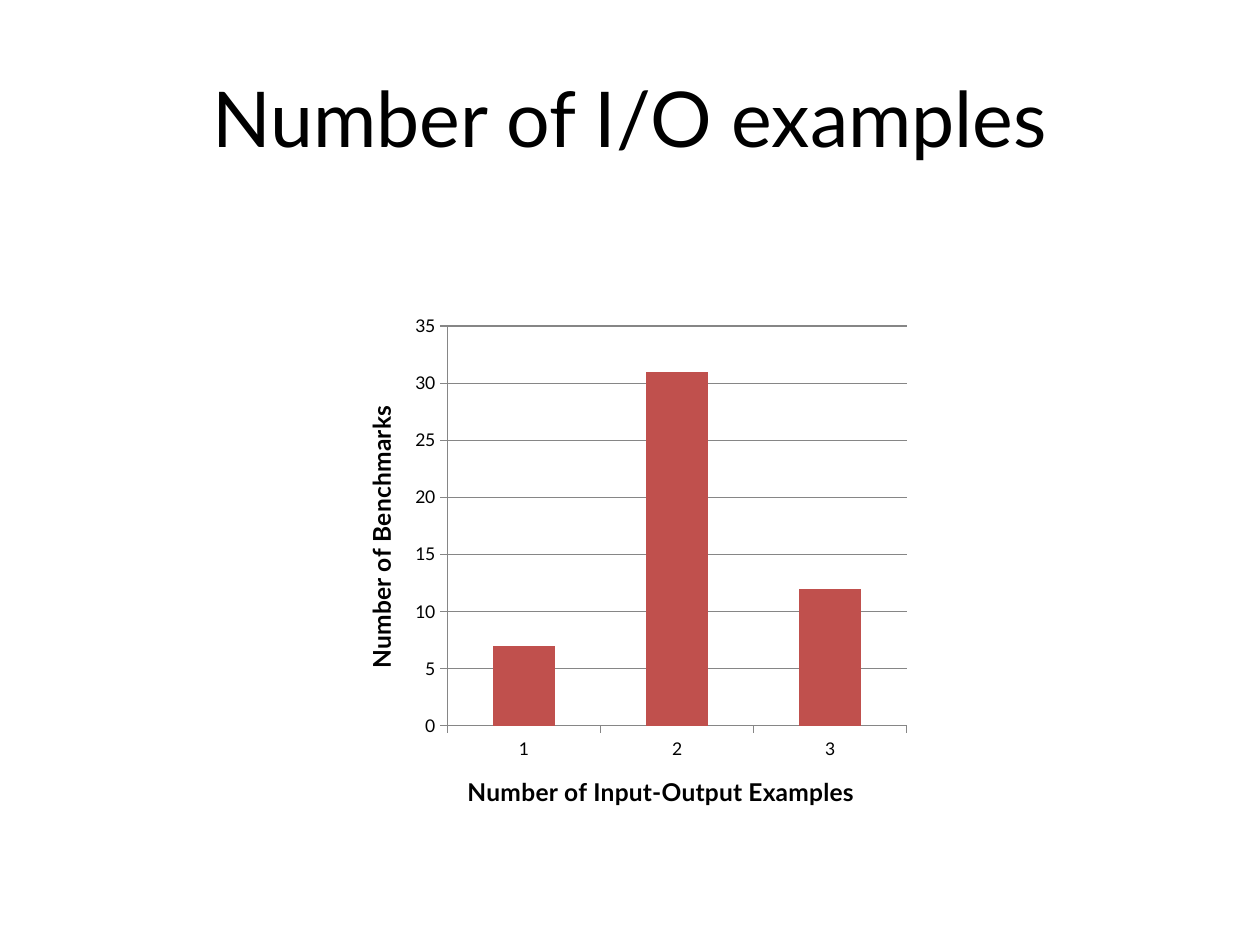
from pptx import Presentation
from pptx.chart.data import CategoryChartData
from pptx.dml.color import RGBColor
from pptx.enum.chart import XL_CHART_TYPE, XL_TICK_MARK
from pptx.enum.text import MSO_ANCHOR, PP_ALIGN
from pptx.util import Cm, Pt


def shade(code):
    return RGBColor.from_string(code)


def apply(item, values):
    for name, value in values.items():
        setattr(item, name, value)


class Deck:
    face = "Lato"
    ink = "000000"
    rule = "868686"
    fill = "C0504D"

    def __init__(self, show):
        self.slide = show.slides.add_slide(show.slide_layouts[5])

    def style(self, font, size, bold=False):
        apply(font, {"name": self.face, "size": Pt(size), "bold": bold})
        font.color.rgb = shade(self.ink)

    def place(self, item, left, top, width, height):
        apply(item, {"left": Cm(left), "top": Cm(top),
                     "width": Cm(width), "height": Cm(height)})

    def title(self, text, *box):
        head = self.slide.shapes.title
        self.place(head, *box)
        frame = head.text_frame
        apply(frame, {"text": text, "word_wrap": True,
                      "vertical_anchor": MSO_ANCHOR.MIDDLE})
        line = frame.paragraphs[0]
        line.alignment = PP_ALIGN.CENTER
        self.style(line.runs[0].font, 44)

    def axis(self, axis, text, grid):
        apply(axis, {"has_title": True, "has_major_gridlines": grid,
                     "major_tick_mark": XL_TICK_MARK.OUTSIDE,
                     "minor_tick_mark": XL_TICK_MARK.NONE})
        frame = axis.axis_title.text_frame
        frame.text = text
        self.style(frame.paragraphs[0].runs[0].font, 14, True)
        self.style(axis.tick_labels.font, 10)
        lines = [axis.format.line]
        if grid:
            lines.append(axis.major_gridlines.format.line)
        for line in lines:
            line.color.rgb = shade(self.rule)
            line.width = Pt(0.75)

    def chart(self, names, counts, across, along, *box):
        data = CategoryChartData()
        data.categories = names
        data.add_series("Series 1", counts)
        chart = self.slide.shapes.add_chart(
            XL_CHART_TYPE.COLUMN_CLUSTERED, *map(Cm, box), data).chart
        apply(chart, {"has_legend": False, "has_title": False})
        self.style(chart.font, 10)
        plot = chart.plots[0]
        apply(plot, {"gap_width": 150, "vary_by_categories": False})
        bars = plot.series[0].format.fill
        bars.solid()
        bars.fore_color.rgb = shade(self.fill)
        self.axis(chart.category_axis, across, False)
        self.axis(chart.value_axis, along, True)
        apply(chart.value_axis, {"minimum_scale": 0, "maximum_scale": 35,
                                 "major_unit": 5})


def main():
    show = Presentation()
    apply(show, {"slide_width": Cm(25.4), "slide_height": Cm(19.05)})
    deck = Deck(show)
    deck.title("Number of I/O examples", 1.27, 0.76, 22.86, 3.18)
    deck.chart(["1", "2", "3"], [7, 31, 12],
               "Number of Input-Output Examples", "Number of Benchmarks",
               6.78, 6.15, 11.73, 10.69)
    show.save("out.pptx")


if __name__ == "__main__":
    main()
